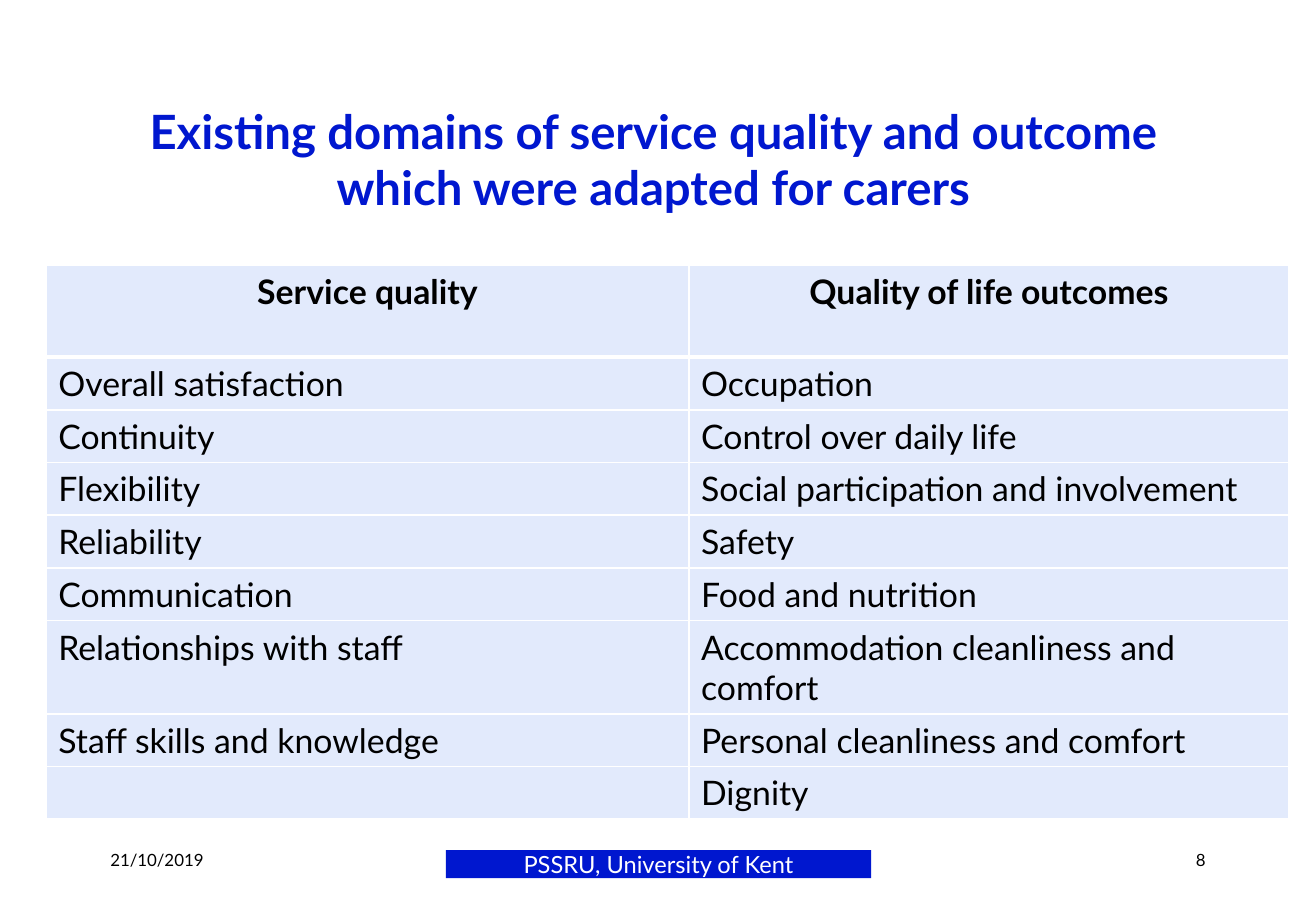
from itertools import product

from lxml.etree import SubElement
from pptx import Presentation
from pptx.dml.color import RGBColor
from pptx.enum.shapes import MSO_SHAPE
from pptx.enum.text import MSO_ANCHOR as ANCHOR, PP_ALIGN as ALIGN
from pptx.oxml.ns import qn
from pptx.util import Pt

EMU_PER_PX = 9144  # 100 px to the inch
BLUE = RGBColor(0x00, 0x17, 0xCF)
PALE = RGBColor(0xE2, 0xEA, 0xFC)
WHITE = RGBColor(0xFF, 0xFF, 0xFF)
BLACK = RGBColor(0x00, 0x00, 0x00)

DOMAINS = [
    ("Service quality", "Quality of life outcomes"),
    ("Overall satisfaction", "Occupation"),
    ("Continuity", "Control over daily life"),
    ("Flexibility", "Social participation and involvement"),
    ("Reliability", "Safety"),
    ("Communication", "Food and nutrition"),
    ("Relationships with staff", "Accommodation cleanliness and comfort"),
    ("Staff skills and knowledge", "Personal cleanliness and comfort"),
    ("", "Dignity"),
]
COL_WIDTHS = [529, 494]
ROW_HEIGHT, TALL_ROW = 43, 76
TALL_ROWS = {0, 6}


def px(*lengths):
    return [n * EMU_PER_PX for n in lengths]


class Slide:
    font = "Lato"

    def __init__(self, prs):
        self.slide = prs.slides.add_slide(prs.slide_layouts[6])

    def set_text(self, tf, text, size, color=BLACK, bold=False, align=ALIGN.LEFT):
        p = tf.paragraphs[0]
        p.text = text
        p.alignment = align
        f = p.font
        f.name, f.size, f.bold = self.font, Pt(size), bold
        f.color.rgb = color

    def text(self, box, text, size, **style):
        tf = self.slide.shapes.add_textbox(*px(*box)).text_frame
        tf.word_wrap = True
        tf.vertical_anchor = ANCHOR.MIDDLE
        self.set_text(tf, text, size, **style)

    def banner(self, box, text, size):
        sp = self.slide.shapes.add_shape(MSO_SHAPE.RECTANGLE, *px(*box))
        sp.shadow.inherit = False
        sp.fill.solid()
        sp.fill.fore_color.rgb = BLUE
        sp.line.fill.background()
        tf = sp.text_frame
        tf.margin_left = tf.margin_top = tf.margin_right = tf.margin_bottom = 0
        tf.vertical_anchor = ANCHOR.MIDDLE
        self.set_text(tf, text, size, color=WHITE, align=ALIGN.CENTER)

    def borders(self, cell, top, bottom):
        """Draw white cell borders; top and bottom are widths in points."""
        tc_pr = cell._tc.get_or_add_tcPr()
        for side, width in zip("LRTB", (1, 1, top, bottom)):
            ln = SubElement(tc_pr, qn(f"a:ln{side}"), w=str(Pt(width)))
            fill = SubElement(ln, qn("a:solidFill"))
            SubElement(fill, qn("a:srgbClr"), val=str(WHITE))

    def table(self, left, top, rows):
        heights = [TALL_ROW if i in TALL_ROWS else ROW_HEIGHT for i in range(len(rows))]
        box = px(left, top, sum(COL_WIDTHS), sum(heights))
        table = self.slide.shapes.add_table(len(rows), len(COL_WIDTHS), *box).table
        for col, width in zip(table.columns, px(*COL_WIDTHS)):
            col.width = width
        for row, height in zip(table.rows, px(*heights)):
            row.height = height
        for i, j in product(range(len(rows)), range(len(COL_WIDTHS))):
            cell, header = table.cell(i, j), i == 0
            self.borders(cell, top=3 if i == 1 else 1, bottom=3 if header else 1)
            cell.fill.solid()
            cell.fill.fore_color.rgb = PALE
            self.set_text(cell.text_frame, rows[i][j], 20, bold=header,
                          align=ALIGN.CENTER if header else ALIGN.LEFT)


def main():
    prs = Presentation()
    prs.slide_width, prs.slide_height = px(1083, 750)
    s = Slide(prs)
    s.banner((367, 700, 350, 23), "PSSRU, University of Kent", 14)
    s.text((77, 68, 921, 125),
           "Existing domains of service quality and outcome which were adapted for carers",
           28, color=BLUE, bold=True, align=ALIGN.CENTER)
    s.table(38, 218, DOMAINS)
    s.text((81, 683, 226, 50), "21/10/2019", 10)
    s.text((776, 683, 226, 50), "8", 10, align=ALIGN.RIGHT)
    prs.save("out.pptx")


if __name__ == "__main__":
    main()
